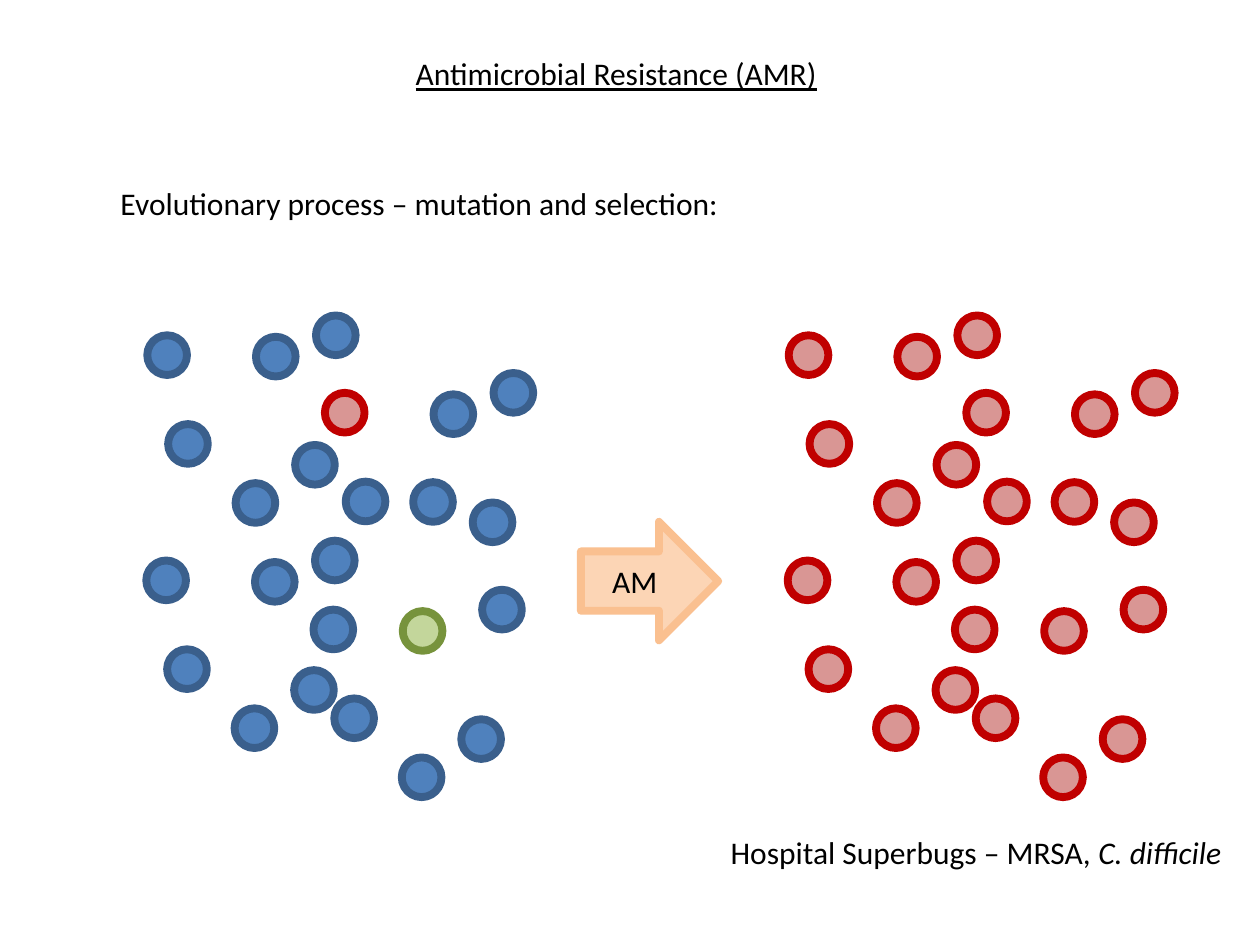
import pptx
import pptx.util
import pptx.dml.color
import pptx.enum.shapes
import pptx.enum.text

Cm, Pt = pptx.util.Cm, pptx.util.Pt
KIND = pptx.enum.shapes.MSO_SHAPE

# Left, top, width in cm; runs as (text, font traits)
LABELS = [
    (8.13, 0.97, 8.69, [("Antimicrobial Resistance (AMR)", {"underline": True})]),
    (2.18, 3.58, 12.7, [("Evolutionary process – mutation and selection:", {})]),
    (14.48, 16.66, 10.57, [("Hospital Superbugs – MRSA, ", {}),
                           ("C. difficile", {"italic": True})]),
]

# Fill and line
BLUE = ("4F81BD", "3A5F8C")
RED = ("D99694", "C00000")
GREEN = ("C3D69B", "77933C")
PEACH = ("FCD5B5", "FAC090")

# Every cluster of germs has the same six offsets, save for the strays
CLUSTER = [(0, 0), (0.42, 1.79), (2.98, 2.21), (3.4, -0.4), (2.19, 0.03), (1.78, 2.98)]
ORIGINS = [(2.97, 6.76), (2.95, 11.3), (6.55, 7.92), (6.32, 12.29)]
STRAYS = {(2, 5): (1.78, 1.8), (3, 4): (1.8, 0.03)}
MUTANTS = {(2, 0): RED, (3, 4): GREEN}
SIZE = 0.8
SHIFT = 12.93  # from the mixed colony to the resistant one
ARROW = (11.71, 10.52, 2.77, 2.39)


def tint(colour, value):
    colour.rgb = pptx.dml.color.RGBColor.from_string(value)


def style(run, **traits):
    run.font.name = "Calibri"
    run.font.size = Pt(18)
    tint(run.font.color, "000000")
    for name, value in traits.items():
        setattr(run.font, name, value)


def draw(slide, kind, box, paint):
    shape = slide.shapes.add_shape(kind, *map(Cm, box))
    shape.shadow.inherit = False
    shape.fill.solid()
    tint(shape.fill.fore_color, paint[0])
    tint(shape.line.color, paint[1])
    shape.line.width = Pt(4.5)
    return shape


def label(slide, left, top, width, parts):
    box = slide.shapes.add_textbox(Cm(left), Cm(top), Cm(width), Cm(1.03))
    box.text_frame.word_wrap = False
    for text, traits in parts:
        run = box.text_frame.paragraphs[0].add_run()
        run.text = text
        style(run, **traits)


def colony(slide, shift, base, mutants):
    for i, (left, top) in enumerate(ORIGINS):
        for j, offset in enumerate(CLUSTER):
            x, y = STRAYS.get((i, j), offset)
            box = (left + x + shift, top + y, SIZE, SIZE)
            draw(slide, KIND.OVAL, box, mutants.get((i, j), base))


def main():
    deck = pptx.Presentation()
    deck.slide_width, deck.slide_height = Cm(25.4), Cm(19.05)
    slide = deck.slides.add_slide(deck.slide_layouts[6])
    for item in LABELS:
        label(slide, *item)
    colony(slide, 0, BLUE, MUTANTS)
    colony(slide, SHIFT, RED, {})
    arrow = draw(slide, KIND.RIGHT_ARROW, ARROW, PEACH)
    frame = arrow.text_frame
    frame.text = "AM"
    frame.vertical_anchor = pptx.enum.text.MSO_ANCHOR.MIDDLE
    frame.paragraphs[0].alignment = pptx.enum.text.PP_ALIGN.CENTER
    style(frame.paragraphs[0].runs[0])
    deck.save("out.pptx")


if __name__ == "__main__":
    main()
